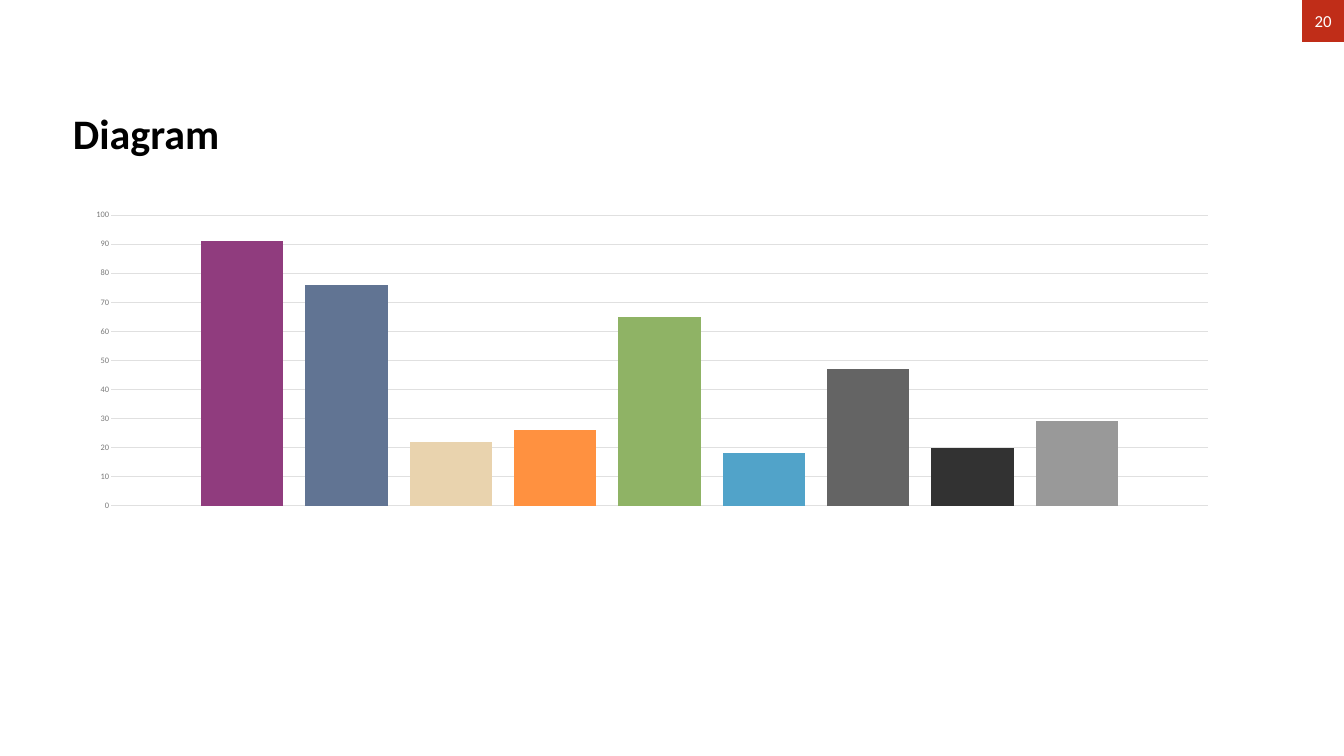
from lxml import etree
from pptx import Presentation
from pptx.chart.data import CategoryChartData
from pptx.dml.color import RGBColor
from pptx.enum.chart import XL_CHART_TYPE, XL_TICK_MARK
from pptx.enum.shapes import MSO_SHAPE
from pptx.enum.text import MSO_ANCHOR, PP_ALIGN
from pptx.oxml.ns import qn
from pptx.util import Emu, Pt

COLUMNS = XL_CHART_TYPE.COLUMN_CLUSTERED
NO_TICKS = XL_TICK_MARK.NONE
RECTANGLE = MSO_SHAPE.RECTANGLE
BOTTOM, MIDDLE = MSO_ANCHOR.BOTTOM, MSO_ANCHOR.MIDDLE
LEFT, CENTER = PP_ALIGN.LEFT, PP_ALIGN.CENTER

EMU_PER_PX = 914400 / 50.4
FONT = "Calibri"
COLORS = {
    "title": "000000", "badge": "C02D18", "badge_text": "FFFFFF",
    "chart_text": "323232", "axis_text": "7A7A7A", "grid": "E0E0E0",
    "purple": "903C7E", "slate": "617493", "sand": "E9D3AE",
    "orange": "FF9140", "green": "8FB365", "blue": "51A3C9",
    "dark_gray": "646464", "charcoal": "323232", "light_gray": "999999",
}
# Column colour and value, from left to right
COLUMN_VALUES = {
    "purple": 91, "slate": 76, "sand": 22, "orange": 26, "green": 65,
    "blue": 18, "dark_gray": 47, "charcoal": 20, "light_gray": 29,
}
# Plot area as fractions of the chart frame
PLOT_AREA = {"x": 0.033, "y": 0.035, "w": 0.947, "h": 0.853}


def px(length):
    return Emu(round(length * EMU_PER_PX))


def rgb(name):
    return RGBColor.from_string(COLORS[name])


def style_font(font, size, color, bold=False):
    font.name = FONT
    font.size = Pt(size)
    font.bold = bold
    font.color.rgb = rgb(color)


def write_text(shape, text, size, color, anchor, align, bold=False):
    frame = shape.text_frame
    frame.word_wrap = True
    frame.vertical_anchor = anchor
    frame.margin_left = frame.margin_right = px(3)
    frame.margin_top = frame.margin_bottom = px(3)
    frame.text = text
    paragraph = frame.paragraphs[0]
    paragraph.alignment = align
    style_font(paragraph.runs[0].font, size, color, bold)


def add_title(slide, text):
    title = slide.shapes.add_textbox(px(70), px(35), px(1158), px(126))
    write_text(title, text, 60, "title", BOTTOM, LEFT, bold=True)


def add_page_badge(slide, number):
    badge = slide.shapes.add_shape(RECTANGLE, px(1302), px(0), px(42), px(42))
    badge.shadow.inherit = False
    badge.fill.solid()
    badge.fill.fore_color.rgb = rgb("badge")
    badge.line.fill.background()
    write_text(badge, number, 24, "badge_text", MIDDLE, CENTER)


def place_plot_area(chart):
    plot_area = chart._chartSpace.chart.plotArea
    for old_layout in plot_area.findall(qn("c:layout")):
        plot_area.remove(old_layout)
    layout = etree.Element(qn("c:layout"))
    plot_area.insert(0, layout)
    manual = etree.SubElement(layout, qn("c:manualLayout"))
    settings = [("layoutTarget", "inner"), ("xMode", "edge"), ("yMode", "edge")]
    for tag, value in settings + list(PLOT_AREA.items()):
        etree.SubElement(manual, qn(f"c:{tag}")).set("val", str(value))


def add_column_chart(slide):
    data = CategoryChartData()
    data.categories = [""]
    for value in COLUMN_VALUES.values():
        data.add_series("", [value])
    chart = slide.shapes.add_chart(
        COLUMNS, px(73), px(203), px(1158), px(341), data).chart
    chart.has_title = False
    chart.has_legend = False
    style_font(chart.font, 10, "chart_text")
    place_plot_area(chart)

    # Columns
    plot = chart.plots[0]
    plot.vary_by_categories = False
    plot.gap_width = 219
    plot.overlap = -27
    for series, color in zip(plot.series, COLUMN_VALUES):
        series.format.fill.solid()
        series.format.fill.fore_color.rgb = rgb(color)

    # Axes
    chart.category_axis.visible = False
    value_axis = chart.value_axis
    value_axis.minimum_scale = 0
    value_axis.maximum_scale = 100
    value_axis.major_unit = 10
    value_axis.major_tick_mark = NO_TICKS
    value_axis.minor_tick_mark = NO_TICKS
    value_axis.format.line.fill.background()
    style_font(value_axis.tick_labels.font, 12, "axis_text")
    gridline = value_axis.major_gridlines.format.line
    gridline.color.rgb = rgb("grid")
    gridline.width = Pt(0.75)


def main():
    deck = Presentation()
    deck.slide_width = px(1344)
    deck.slide_height = px(756)
    slide = deck.slides.add_slide(deck.slide_layouts[6])
    add_title(slide, "Diagram")
    add_page_badge(slide, "20")
    add_column_chart(slide)
    deck.save("out.pptx")


if __name__ == "__main__":
    main()
